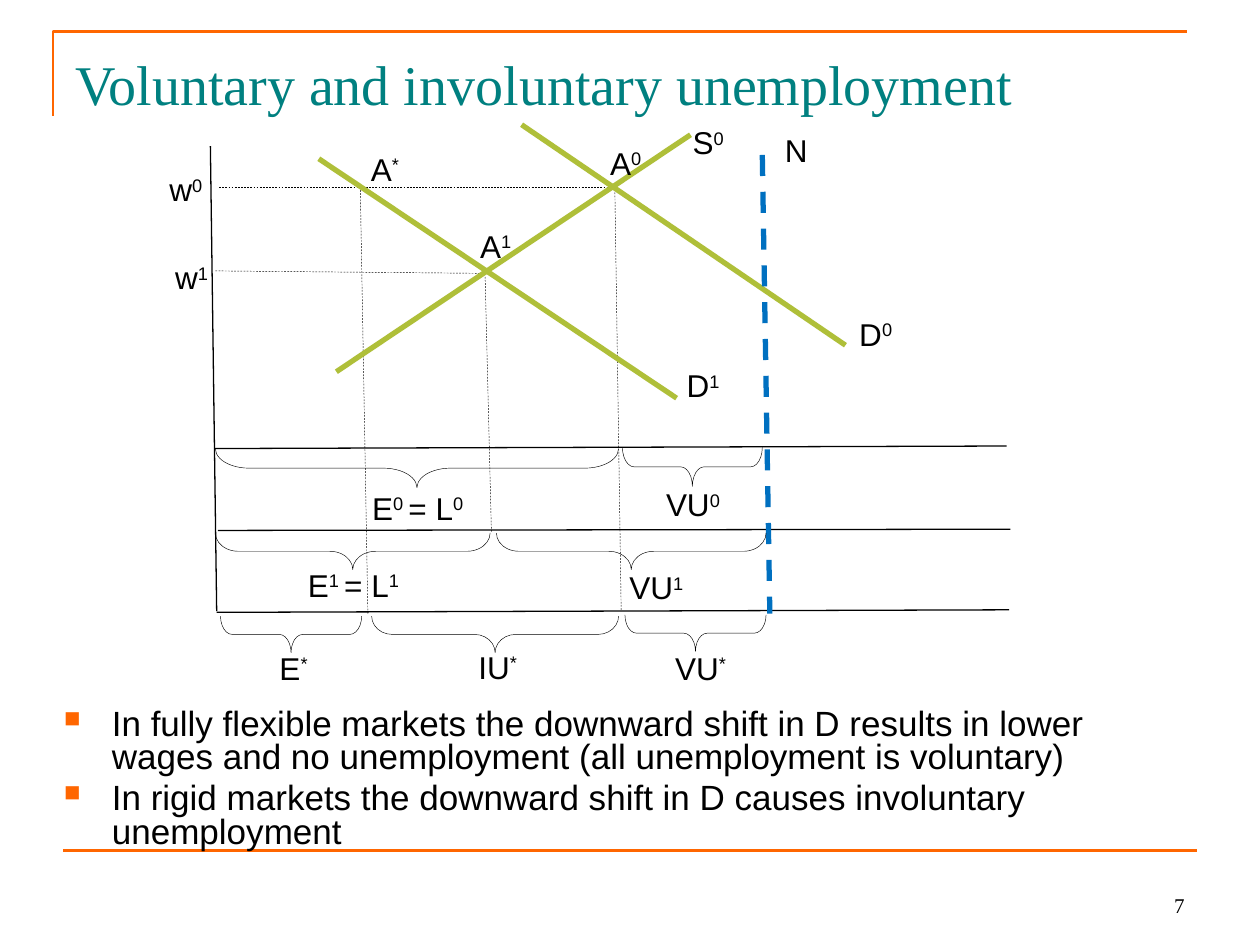
from lxml import etree
from pptx import Presentation
from pptx import util as u
from pptx.dml.color import RGBColor
from pptx.enum import dml, shapes, text
from pptx.oxml.ns import qn

ORANGE = RGBColor(0xFF, 0x66, 0x00)
TEAL = RGBColor(0x00, 0x80, 0x80)
BLACK = RGBColor(0x00, 0x00, 0x00)
GREEN = RGBColor(0xAF, 0xBF, 0x39)
BLUE = RGBColor(0x00, 0x70, 0xC0)

AXES = [
    (1.67, 1.16, 1.72, 4.85),
    (1.7, 3.56, 7.99, 3.54),
    (1.73, 4.21, 8.02, 4.2),
    (1.72, 4.86, 8.01, 4.84),
]
GUIDES = [
    (1.74, 1.49, 4.86, 1.49),
    (1.71, 2.15, 3.86, 2.17),
    (4.93, 4.84, 4.88, 1.51),
    (3.9, 4.22, 3.85, 2.19),
    (2.92, 4.87, 2.86, 1.51),
]
CURVES = [
    (2.67, 2.95, 5.48, 1.07),
    (4.14, 0.99, 6.71, 2.74),
    (2.53, 1.26, 5.37, 3.16),
]
LIMIT = (6.05, 1.23, 6.11, 4.87)

# left, top, span, depth
BRACES = [
    (1.71, 3.56, 3.2, 0.31),
    (4.94, 3.55, 1.11, 0.31),
    (1.71, 4.23, 2.18, 0.29),
    (3.94, 4.23, 2.14, 0.29),
    (1.75, 4.89, 1.12, 0.29),
    (2.95, 4.89, 1.96, 0.29),
    (4.96, 4.88, 1.12, 0.29),
]

# left, top, width, wording; every second part between bars is raised
LABELS = [
    (1.15, 1.3, 0.65, "w|0"),
    (1.21, 2, 0.62, "w|1"),
    (5.33, 0.93, 0.58, "S|0"),
    (6.66, 2.45, 0.58, "D|0"),
    (5.29, 2.86, 0.58, "D|1"),
    (6.03, 0.99, 0.58, "N"),
    (2.73, 1.14, 0.65, "A|*"),
    (4.64, 1.09, 0.65, "A|0"),
    (3.61, 1.75, 0.65, "A|1"),
    (2.82, 3.83, 0.99, "E|0 |= L|0"),
    (5.12, 3.8, 0.76, "VU|0"),
    (2.31, 4.44, 0.99, "E|1 |= L|1"),
    (4.76, 4.46, 0.9, "VU|1"),
    (1.88, 5.1, 0.9, "E|*"),
    (3.5, 5.09, 0.9, "IU|*"),
    (5.11, 5.1, 0.9, "VU|*"),
]

POINTS = [
    "In fully flexible markets the downward shift in D results in lower "
    "wages and no unemployment (all unemployment is voluntary)",
    "In rigid markets the downward shift in D causes involuntary unemployment",
]


def draw_line(slide, ends, color, width, dash=None):
    line = slide.shapes.add_connector(
        shapes.MSO_CONNECTOR.STRAIGHT, *map(u.Inches, ends))
    line.line.color.rgb = color
    line.line.width = u.Pt(width)
    if dash:
        line.line.dash_style = dash
    etree.SubElement(line._element.spPr, qn("a:effectLst"))


def style_outline(shape, color, width):
    shape.fill.background()
    shape.line.color.rgb = color
    shape.line.width = u.Pt(width)
    shape.shadow.inherit = False


def draw_frame(slide):
    pen = slide.shapes.build_freeform(
        u.Inches(0.42), u.Inches(0.92), scale=1.0)
    corners = [(0.42, 0.25), (9.42, 0.25)]
    pen.add_line_segments(
        [(u.Inches(x), u.Inches(y)) for x, y in corners], close=False)
    style_outline(pen.convert_to_shape(), ORANGE, 1.5)


def draw_brace(slide, left, top, span, depth):
    """Draw a brace that opens upward; its curve is a twelfth of its span."""
    shift = (span - depth) / 2
    box = (left + shift, top - shift, depth, span)
    brace = slide.shapes.add_shape(
        shapes.MSO_SHAPE.LEFT_BRACE, *map(u.Inches, box))
    brace.rotation = 270
    brace.adjustments[0] = span / 12 / depth
    style_outline(brace, BLACK, 0.25)


def add_box(slide, box, anchor=text.MSO_ANCHOR.TOP):
    frame = slide.shapes.add_textbox(*map(u.Inches, box)).text_frame
    frame.word_wrap = True
    frame.vertical_anchor = anchor
    return frame


def set_font(para, size, color=BLACK, name="Arial"):
    para.font.size = u.Pt(size)
    para.font.color.rgb = color
    para.font.name = name


def add_label(slide, left, top, width, words):
    para = add_box(slide, (left, top, width, 0.4)).paragraphs[0]
    para.alignment = text.PP_ALIGN.CENTER
    set_font(para, 18)
    for i, part in enumerate(words.split("|")):
        run = para.add_run()
        run.text = part
        if i % 2:
            run.font._element.set("baseline", "30000")


def set_bullet(para):
    props = para._p.get_or_add_pPr()
    indent = u.Inches(0.38)
    props.set("marL", str(indent))
    props.set("indent", str(-indent))
    color = etree.Element(qn("a:buClr"))
    etree.SubElement(color, qn("a:srgbClr"), val=str(ORANGE))
    size = etree.Element(qn("a:buSzPct"), val="65000")
    mark = etree.Element(qn("a:buChar"), char="■")
    spot = props.find(qn("a:defRPr"))
    for item in (color, size, mark):
        spot.addprevious(item)


def add_points(slide):
    frame = add_box(slide, (0.41, 5.58, 9, 1.21))
    for i, point in enumerate(POINTS):
        para = frame.add_paragraph() if i else frame.paragraphs[0]
        para.text = point
        para.line_spacing = 0.8
        para.space_before = u.Pt(4)
        set_font(para, 20)
        set_bullet(para)


def add_title(slide):
    para = add_box(
        slide, (0.5, 0.3, 9, 0.72), text.MSO_ANCHOR.MIDDLE).paragraphs[0]
    para.text = "Voluntary and involuntary unemployment"
    set_font(para, 32, TEAL, "Times New Roman")


def add_number(slide):
    para = add_box(
        slide, (7.17, 6.83, 2.33, 0.5), text.MSO_ANCHOR.BOTTOM).paragraphs[0]
    para.text = "7"
    para.alignment = text.PP_ALIGN.RIGHT
    set_font(para, 12, name="Times New Roman")


def main():
    deck = Presentation()
    deck.slide_width, deck.slide_height = u.Inches(10), u.Inches(7.5)
    slide = deck.slides.add_slide(deck.slide_layouts[6])

    draw_frame(slide)
    draw_line(slide, (0.5, 6.75, 9.5, 6.75), ORANGE, 1.5)
    add_number(slide)
    add_title(slide)
    add_points(slide)

    dash = dml.MSO_LINE.DASH
    for ends in AXES:
        draw_line(slide, ends, BLACK, 0.75)
    for ends in GUIDES:
        draw_line(slide, ends, BLACK, 0.25, dash)
    for ends in CURVES:
        draw_line(slide, ends, GREEN, 3)
    draw_line(slide, LIMIT, BLUE, 3, dash)
    for brace in BRACES:
        draw_brace(slide, *brace)
    for label in LABELS:
        add_label(slide, *label)

    deck.save("out.pptx")


if __name__ == "__main__":
    main()
